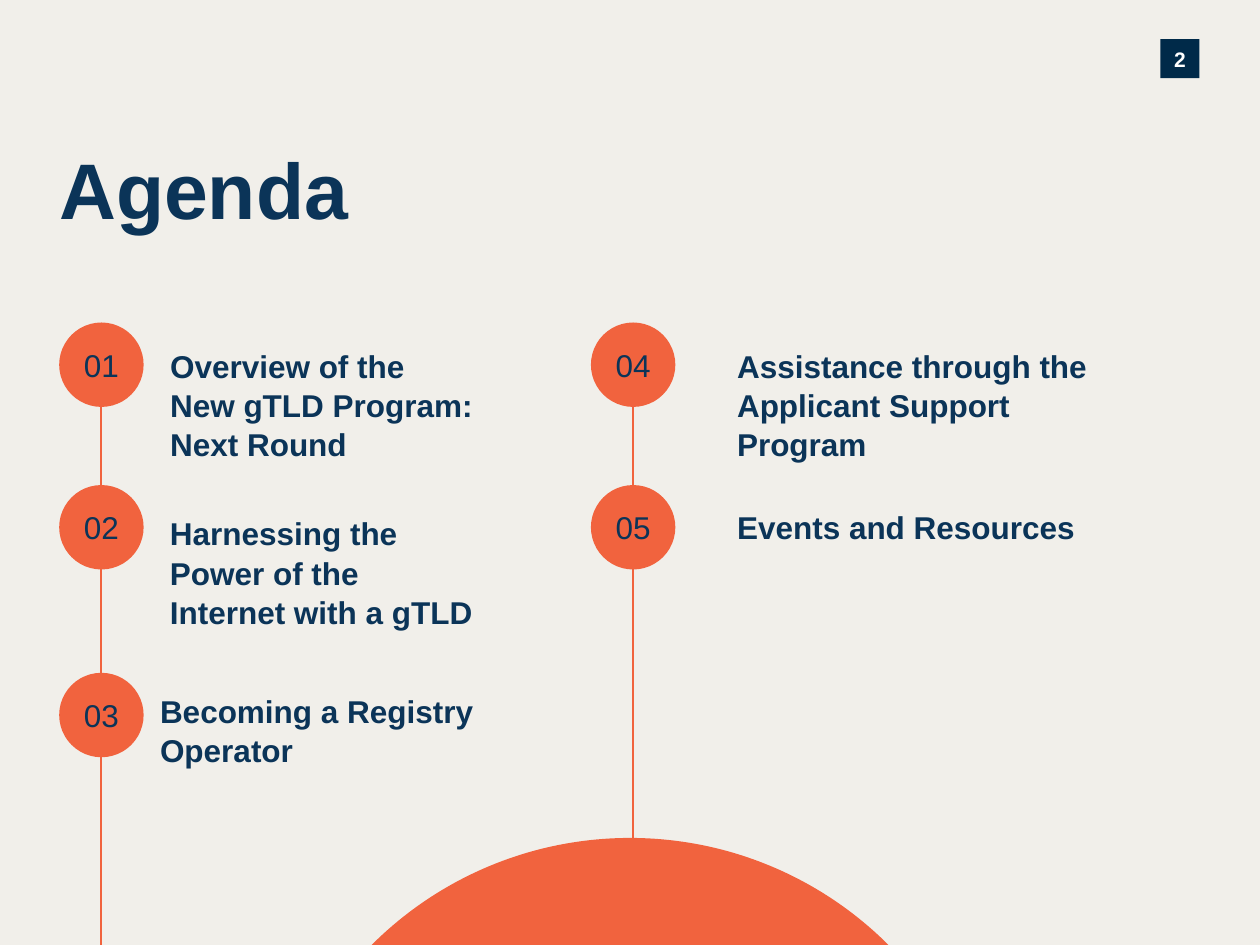
from lxml.etree import SubElement
from pptx import Presentation
from pptx.dml.color import RGBColor
from pptx.enum.shapes import MSO_CONNECTOR as Link, MSO_SHAPE as Kind
from pptx.enum.text import MSO_ANCHOR as Anchor, PP_ALIGN as Align
from pptx.oxml.ns import qn
from pptx.util import Inches, Pt

CREAM = RGBColor(0xF1, 0xEF, 0xEA)
ORANGE = RGBColor(0xF1, 0x63, 0x3E)
NAVY = RGBColor(0x0B, 0x34, 0x58)
DARK = RGBColor(0x00, 0x2A, 0x49)
WHITE = RGBColor(0xFF, 0xFF, 0xFF)

WIDTH, HEIGHT = 10, 7.5
DOT = 0.67
TOPS = [2.56, 3.85, 5.34]
LINE_TOP = 3.1

# Per column: dot left, then (text, label box, inset) for each item
COLUMNS = [
    (0.47, [
        ("Overview of the\vNew gTLD Program:\vNext Round", (1.35, 2.74, 2.78, 1.21), 0),
        ("Harnessing the Power of the Internet with a gTLD", (1.25, 3.97, 2.65, 1.38), 0.1),
        ("Becoming a Registry Operator", (1.27, 5.48, 2.78, 0.91), 0),
    ]),
    (4.69, [
        ("Assistance through the Applicant Support Program", (5.85, 2.74, 3.06, 0.91), 0),
        ("Events and Resources", (5.85, 4.02, 3.06, 0.61), 0),
    ]),
]


def write(shape, text, size, color=NAVY, bold=True, align=Align.LEFT,
          anchor=Anchor.MIDDLE, inset=0, spacing=None):
    frame = shape.text_frame
    frame.word_wrap = True
    frame.vertical_anchor = anchor
    frame.margin_left = frame.margin_right = Inches(inset)
    frame.margin_top = frame.margin_bottom = Inches(inset)
    para = frame.paragraphs[0]
    para.text = text
    para.alignment = align
    para.line_spacing = spacing
    font = para.font
    font.name, font.size, font.bold = "Arial", Pt(size), bold
    font.color.rgb = color


def add_text(box, text, size, **style):
    write(slide.shapes.add_textbox(*map(Inches, box)), text, size, **style)


def add_solid(kind, box, color):
    shape = slide.shapes.add_shape(kind, *map(Inches, box))
    shape.shadow.inherit = False
    shape.fill.solid()
    shape.fill.fore_color.rgb = color
    shape.line.fill.background()
    return shape


def add_stem(x):
    x = Inches(x)
    stem = slide.shapes.add_connector(Link.STRAIGHT, x, Inches(LINE_TOP), x, Inches(HEIGHT))
    stem.line.color.rgb = ORANGE
    stem.line.width = Pt(1.25)
    SubElement(stem._element.spPr, qn("a:effectLst"))


deck = Presentation()
deck.slide_width, deck.slide_height = Inches(WIDTH), Inches(HEIGHT)
slide = deck.slides.add_slide(deck.slide_layouts[6])
slide.background.fill.solid()
slide.background.fill.fore_color.rgb = CREAM

dome = add_solid(Kind.CHORD, (2.1, 6.65, 5.8, 5.8), ORANGE)
dome.adjustments[0], dome.adjustments[1] = 53.75, 108.21
dome.rotation = 135

badge = add_solid(Kind.RECTANGLE, (9.21, 0.31, 0.31, 0.31), DARK)
write(badge, "2", 12, color=WHITE, align=Align.CENTER, spacing=1.08)
add_text((0.47, 1.06, 3.69, 0.87), "Agenda", 45)

number = 0
for left, items in COLUMNS:
    add_stem(left + DOT / 2)
    for top, (text, box, inset) in zip(TOPS, items):
        number += 1
        dot = add_solid(Kind.ROUND_2_SAME_RECTANGLE, (left, top, DOT, DOT), ORANGE)
        dot.adjustments[0] = dot.adjustments[1] = 0.5
        write(dot, f"{number:02}", 18, bold=False, align=Align.CENTER)
        add_text(box, text, 18, anchor=Anchor.TOP, inset=inset, spacing=1.04)

deck.save("out.pptx")
